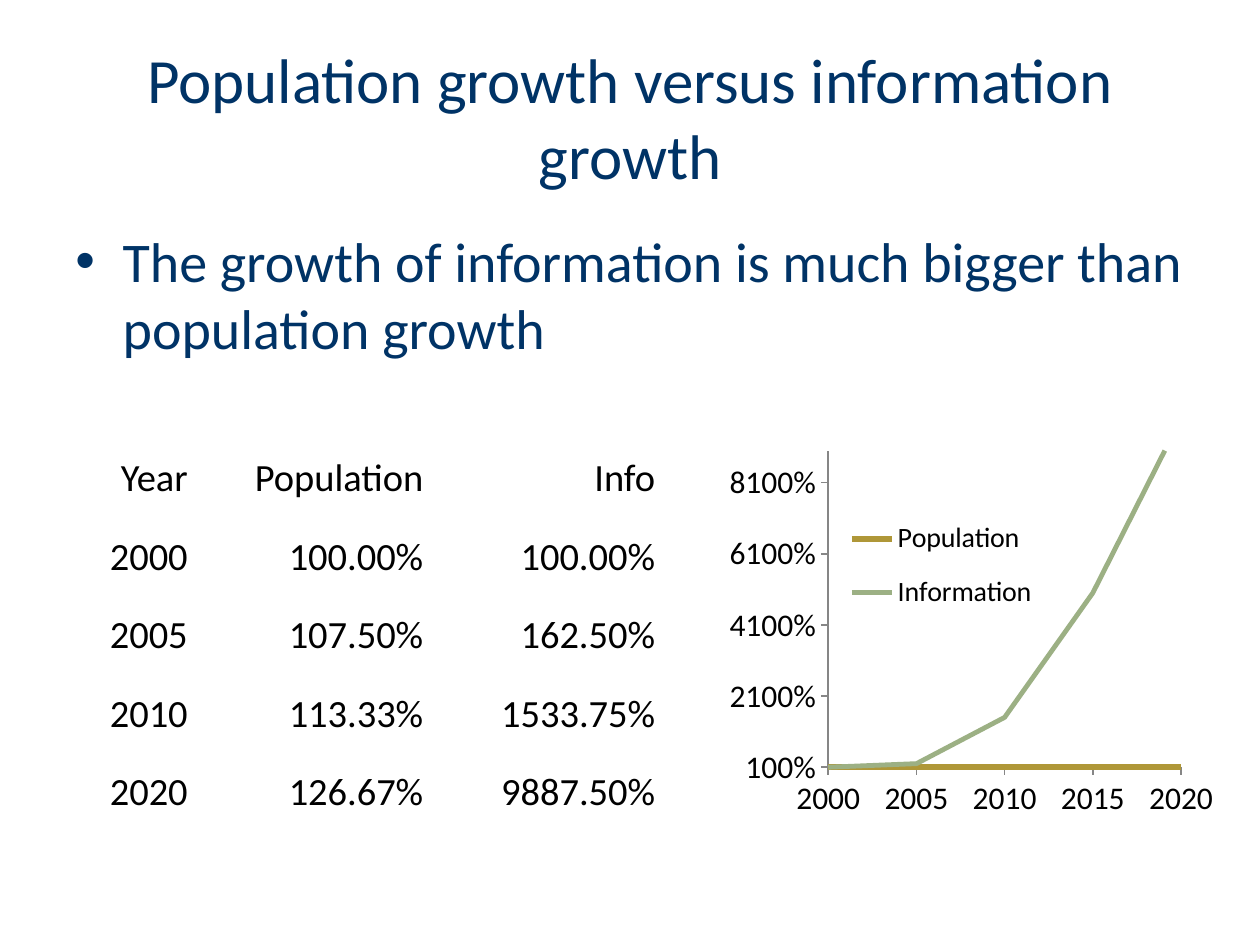
import pptx
import pptx.chart.data
import pptx.dml.color
import pptx.enum.chart
import pptx.enum.text
import pptx.oxml
import pptx.oxml.ns
import pptx.util

Pt = pptx.util.Pt
qn = pptx.oxml.ns.qn
ALIGN = pptx.enum.text.PP_ALIGN
ANCHOR = pptx.enum.text.MSO_ANCHOR
FONT = "Calibri"
NAVY = "003366"
BLACK = "000000"
GREY = "868686"

ROWS = [
    ("Year", "Population", "Info"),
    ("2000", "100.00%", "100.00%"),
    ("2005", "107.50%", "162.50%"),
    ("2010", "113.33%", "1533.75%"),
    ("2020", "126.67%", "9887.50%"),
]
YEARS = ["2000", "2005", "2010", "2015", "2020"]
SERIES = [
    ("Population", (1, 1, 1, 1, 1), "AF9738", 3.25),
    ("Information", (1, 2, 15, 50, 99), "9CB084", 2.75),
]


def rgb(value):
    """Turn a hex string into a colour."""
    return pptx.dml.color.RGBColor.from_string(value)


def style_font(font, size, color):
    """Set typeface, size and colour of a font."""
    font.name = FONT
    font.size = Pt(size)
    font.color.rgb = rgb(color)


def make_element(tag, **attributes):
    """Create an XML element with the given attributes."""
    element = pptx.oxml.parse_xml(f'<{tag} {pptx.oxml.ns.nsdecls(tag.split(":")[0])}/>')
    for name, value in attributes.items():
        element.set(name, str(value))
    return element


def add_text(slide, box, text, size, align, anchor):
    """Add a wrapped navy text box and return its paragraph."""
    shape = slide.shapes.add_textbox(*map(Pt, box))
    frame = shape.text_frame
    frame.word_wrap = True
    frame.vertical_anchor = anchor
    paragraph = frame.paragraphs[0]
    paragraph.text = text
    paragraph.alignment = align
    style_font(paragraph.font, size, NAVY)
    return paragraph


def add_bullet(paragraph, indent):
    """Give a paragraph a hanging round bullet."""
    properties = paragraph._p.get_or_add_pPr()
    properties.set("marL", str(Pt(indent)))
    properties.set("indent", str(-Pt(indent)))
    properties.insert(0, make_element("a:buFont", typeface="Arial"))
    properties.insert(1, make_element("a:buChar", char="•"))


def add_growth_table(slide, box, widths):
    """Add the plain, right-aligned table of growth figures."""
    table = slide.shapes.add_table(len(ROWS), len(widths), *map(Pt, box)).table
    table.first_row = table.horz_banding = False
    for column, width in zip(table.columns, widths):
        column.width = Pt(width)
    for row, texts in enumerate(ROWS):
        for column, text in enumerate(texts):
            cell = table.cell(row, column)
            cell.fill.background()
            cell.vertical_anchor = ANCHOR.BOTTOM
            cell.margin_left = cell.margin_right = cell.margin_top = cell.margin_bottom = 0
            paragraph = cell.text_frame.paragraphs[0]
            paragraph.text = text
            paragraph.alignment = ALIGN.RIGHT
            style_font(paragraph.font, 22, BLACK)


def set_layout(parent, position, box, inner=False):
    """Place a chart part by percentages of the chart area."""
    for old in parent.findall(qn("c:layout")):
        parent.remove(old)
    layout = make_element("c:layout")
    manual = make_element("c:manualLayout")
    layout.append(manual)
    if inner:
        manual.append(make_element("c:layoutTarget", val="inner"))
    for name in ("xMode", "yMode"):
        manual.append(make_element(f"c:{name}", val="edge"))
    for name, percent in zip("xywh", box):
        manual.append(make_element(f"c:{name}", val=percent / 100))
    parent.insert(position, layout)


def style_axis(axis):
    """Give an axis a grey line, outer ticks and no gridlines."""
    axis.has_major_gridlines = False
    axis.major_tick_mark = pptx.enum.chart.XL_TICK_MARK.OUTSIDE
    axis.minor_tick_mark = pptx.enum.chart.XL_TICK_MARK.NONE
    axis.format.line.color.rgb = rgb(GREY)
    axis.format.line.width = Pt(1)
    style_font(axis.tick_labels.font, 18, BLACK)


def start_on_axis(value_axis):
    """Make the first category sit on the value axis."""
    element = value_axis._element
    for old in element.findall(qn("c:crossBetween")):
        element.remove(old)
    element.find(qn("c:crosses")).addnext(make_element("c:crossBetween", val="midCat"))


def add_growth_chart(slide, box):
    """Add the line chart of population against information."""
    data = pptx.chart.data.CategoryChartData(number_format="0%")
    data.categories = YEARS
    for name, values, _, _ in SERIES:
        data.add_series(name, values)
    kind = pptx.enum.chart.XL_CHART_TYPE.LINE
    chart = slide.shapes.add_chart(kind, *map(Pt, box), data).chart
    chart.has_title = False
    style_font(chart.font, 18, BLACK)
    chart.plots[0].vary_by_categories = False
    for series, (_, _, color, width) in zip(chart.plots[0].series, SERIES):
        series.smooth = False
        series.format.line.color.rgb = rgb(color)
        series.format.line.width = Pt(width)
        series.marker.style = pptx.enum.chart.XL_MARKER_STYLE.NONE
    for axis in (chart.category_axis, chart.value_axis):
        style_axis(axis)
    value_axis = chart.value_axis
    value_axis.minimum_scale, value_axis.maximum_scale, value_axis.major_unit = 1, 90, 20
    value_axis.tick_labels.number_format = "0%"
    value_axis.tick_labels.number_format_is_linked = False
    start_on_axis(value_axis)
    chart.has_legend = True
    chart.legend.position = pptx.enum.chart.XL_LEGEND_POSITION.RIGHT
    chart.legend.include_in_layout = False
    style_font(chart.legend.font, 16, BLACK)
    set_layout(chart.legend._element, 1, (24.7, 18, 36, 29))
    plot_area = chart._chartSpace.chart.plotArea
    set_layout(plot_area, 0, (22.3, 6.2, 63.5, 72.4), inner=True)


def main():
    """Build the slide and save it."""
    presentation = pptx.Presentation()
    presentation.slide_width, presentation.slide_height = Pt(720), Pt(540)
    slide = presentation.slides.add_slide(presentation.slide_layouts[6])
    add_text(slide, (36, 21.6, 648, 90), "Population growth versus information growth",
             36, ALIGN.CENTER, ANCHOR.MIDDLE)
    message = add_text(slide, (36, 126, 648, 356.4),
                       "The growth of information is much bigger than population growth",
                       32, ALIGN.LEFT, ANCHOR.TOP)
    add_bullet(message, 27)
    add_growth_table(slide, (0, 242, 374.4, 224.5), (107.3, 134.6, 132.5))
    add_growth_chart(slide, (402.5, 242, 317.5, 250))
    presentation.save("out.pptx")


if __name__ == "__main__":
    main()
